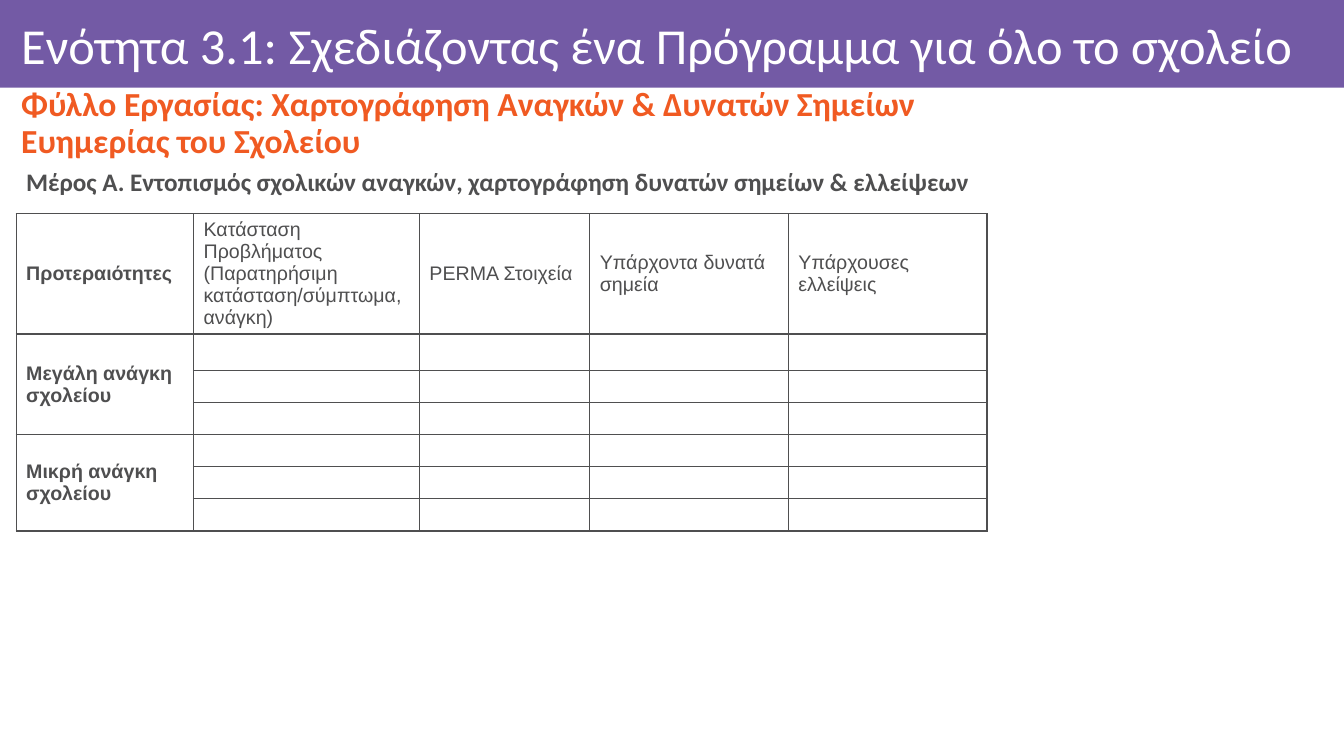
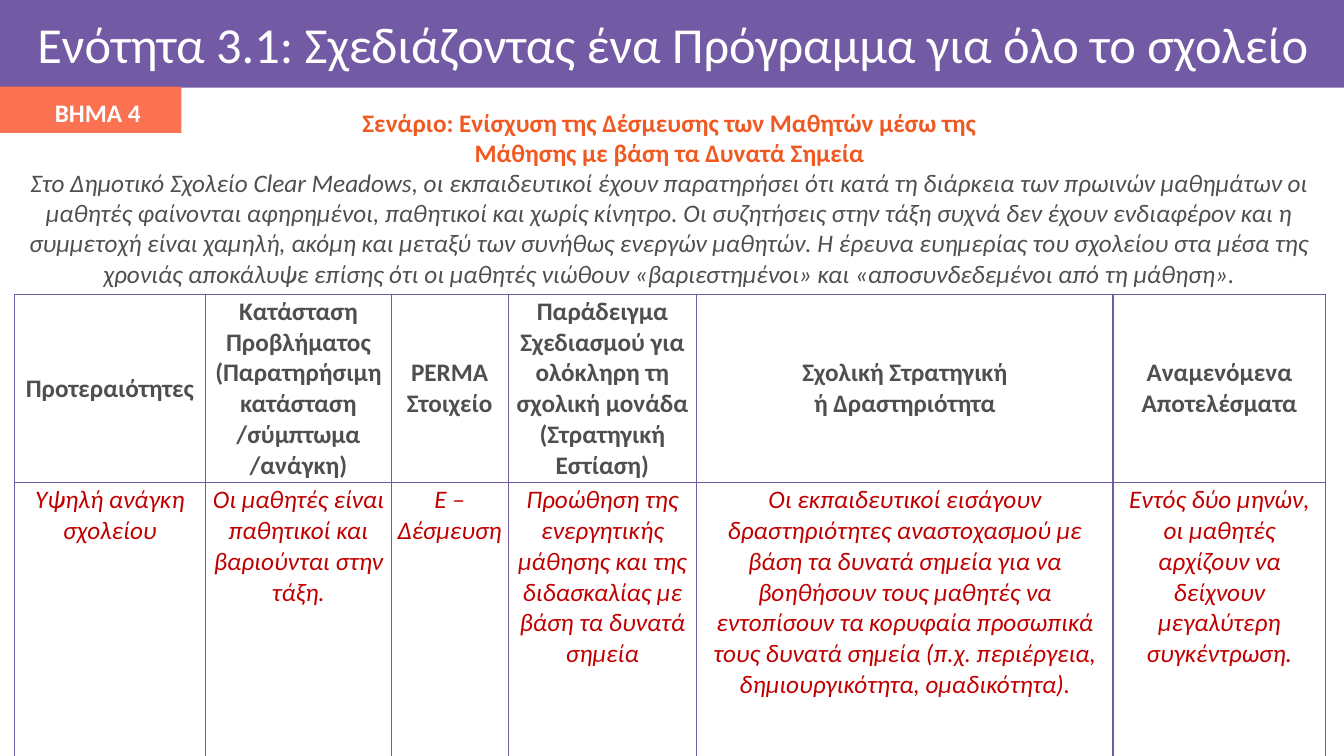
"""Two worksheet slides on designing a whole-school wellbeing programme."""
from lxml.etree import SubElement
from pptx import Presentation
from pptx.dml.color import RGBColor
from pptx.enum.shapes import MSO_SHAPE
from pptx.enum.text import MSO_ANCHOR, MSO_AUTO_SIZE, PP_ALIGN
from pptx.oxml.ns import qn
from pptx.util import Inches, Pt

PURPLE = RGBColor(0x73, 0x5A, 0xA5)
ORANGE = RGBColor(0xF0, 0x5A, 0x22)
CORAL = RGBColor(0xFA, 0x72, 0x52)
GREY = RGBColor(0x4F, 0x4F, 0x50)
RED = RGBColor(0xC0, 0x00, 0x00)
WHITE = RGBColor(0xFF, 0xFF, 0xFF)
WIDTH, HEIGHT, BAND_HEIGHT = 13.33, 7.5, 0.87
TEXT_WIDTH = 13.06

UNIT = "Ενότητα 3.1: Σχεδιάζοντας ένα Πρόγραμμα για όλο το σχολείο"
WORKSHEET = "Φύλλο Εργασίας: Χαρτογράφηση Αναγκών & Δυνατών Σημείων\vΕυημερίας του Σχολείου"
PART = "Μέρος Α. Εντοπισμός σχολικών αναγκών, χαρτογράφηση δυνατών σημείων & ελλείψεων"
NEEDS_HEADER = [
    "Προτεραιότητες",
    "Κατάσταση Προβλήματος (Παρατηρήσιμη κατάσταση/σύμπτωμα, ανάγκη)",
    "PERMA Στοιχεία",
    "Υπάρχοντα δυνατά σημεία",
    "Υπάρχουσες ελλείψεις",
]
PRIORITIES = ["Μεγάλη ανάγκη σχολείου", "Μικρή ανάγκη σχολείου"]
LINES_PER_PRIORITY = 3
NEEDS_COLUMNS = [1.76, 2.24, 1.69, 1.97, 1.97]
NEEDS_ROWS = [1.02, 0.36] + [0.27] * 5

STEP = "ΒΗΜΑ 4"
SCENARIO = "Σενάριο: Ενίσχυση της Δέσμευσης των Μαθητών μέσω της\vΜάθησης με βάση τα Δυνατά Σημεία"
STORY = (
    "Στο Δημοτικό Σχολείο Clear Meadows, οι εκπαιδευτικοί έχουν παρατηρήσει ότι κατά τη "
    "διάρκεια των πρωινών μαθημάτων οι μαθητές φαίνονται αφηρημένοι, παθητικοί και χωρίς "
    "κίνητρο. Οι συζητήσεις στην τάξη συχνά δεν έχουν ενδιαφέρον και η συμμετοχή είναι "
    "χαμηλή, ακόμη και μεταξύ των συνήθως ενεργών μαθητών. Η έρευνα ευημερίας του σχολείου "
    "στα μέσα της χρονιάς αποκάλυψε επίσης ότι οι μαθητές νιώθουν «βαριεστημένοι» και "
    "«αποσυνδεδεμένοι από τη μάθηση»."
)
PLAN = [
    ("Προτεραιότητες", "Υψηλή ανάγκη σχολείου"),
    ("Κατάσταση Προβλήματος (Παρατηρήσιμη κατάσταση /σύμπτωμα\v/ανάγκη)",
     "Οι μαθητές είναι παθητικοί και βαριούνται στην τάξη."),
    ("PERMA Στοιχείο", "E – Δέσμευση"),
    ("Παράδειγμα Σχεδιασμού για ολόκληρη τη σχολική μονάδα (Στρατηγική Εστίαση)",
     "Προώθηση της ενεργητικής μάθησης και της διδασκαλίας με βάση τα δυνατά σημεία"),
    ("Σχολική Στρατηγική\vή Δραστηριότητα",
     "Οι εκπαιδευτικοί εισάγουν δραστηριότητες αναστοχασμού με βάση τα δυνατά σημεία για να "
     "βοηθήσουν τους μαθητές να εντοπίσουν τα κορυφαία προσωπικά τους δυνατά σημεία "
     "(π.χ. περιέργεια, δημιουργικότητα, ομαδικότητα)."),
    ("Αναμενόμενα Αποτελέσματα",
     "Εντός δύο μηνών, οι μαθητές αρχίζουν να δείχνουν μεγαλύτερη συγκέντρωση."),
]
PLAN_COLUMNS = [1.9, 1.84, 1.16, 1.87, 4.13, 2.11]
PLAN_ROWS = [1.72, 2.78]


def write(paragraph, text, size, color, bold=False, italic=False, font="Calibri",
          align=PP_ALIGN.LEFT, spacing=1.0):
    """Fill a paragraph with uniformly formatted text and no bullet."""
    paragraph.text = text
    paragraph.alignment = align
    paragraph.line_spacing = spacing
    paragraph.space_before = Pt(0)
    properties = paragraph._p.get_or_add_pPr()
    properties.set("marL", "0")
    properties.set("indent", "0")
    SubElement(properties, qn("a:buNone"))
    for run in paragraph.runs:
        run.font.name, run.font.size = font, Pt(size)
        run.font.bold, run.font.italic = bold, italic
        run.font.color.rgb = color


def place(shape, left, top, width, height):
    shape.left, shape.top = Inches(left), Inches(top)
    shape.width, shape.height = Inches(width), Inches(height)


def set_frame(frame, anchor, margins=(0.1, 0.05, 0.1, 0.05)):
    frame.word_wrap = True
    frame.auto_size = MSO_AUTO_SIZE.NONE
    frame.vertical_anchor = anchor
    (frame.margin_left, frame.margin_top,
     frame.margin_right, frame.margin_bottom) = map(Inches, margins)


def add_bar(slide, width, top, height, color):
    bar = slide.shapes.add_shape(MSO_SHAPE.RECTANGLE, 0, Inches(top), Inches(width), Inches(height))
    bar.shadow.inherit = False
    bar.fill.solid()
    bar.fill.fore_color.rgb = color
    bar.line.fill.background()
    return bar


def add_unit_slide(deck, title_left, title_top):
    slide = deck.slides.add_slide(deck.slide_layouts[1])
    title = slide.shapes.title
    place(title, title_left, title_top, TEXT_WIDTH, 0.78)
    set_frame(title.text_frame, MSO_ANCHOR.MIDDLE, (0.1, 0.06, 0.06, 0.06))
    write(title.text_frame.paragraphs[0], UNIT, 36, WHITE, spacing=0.9)
    return slide, slide.placeholders[1]


def add_grid(slide, left, top, columns, rows, border):
    """Add an unfilled table with a one-point border round every cell."""
    table = slide.shapes.add_table(
        len(rows), len(columns), Inches(left), Inches(top),
        Inches(sum(columns)), Inches(sum(rows))).table
    table.first_row = table.horz_banding = False
    for column, width in zip(table.columns, columns):
        column.width = Inches(width)
    for row, height in zip(table.rows, rows):
        row.height = Inches(height)
    for cell in table.iter_cells():
        properties = cell._tc.get_or_add_tcPr()
        for side in ("a:lnL", "a:lnR", "a:lnT", "a:lnB"):
            line = SubElement(properties, qn(side), w=str(Pt(1)))
            SubElement(SubElement(line, qn("a:solidFill")), qn("a:srgbClr"), val=str(border))
        cell.fill.background()
        cell.vertical_anchor = MSO_ANCHOR.MIDDLE
    return table


def build_needs_slide(deck):
    slide, heading = add_unit_slide(deck, 0.11, 0.09)
    place(heading, 0.11, 0.93, TEXT_WIDTH, 0.6)
    set_frame(heading.text_frame, MSO_ANCHOR.MIDDLE)
    write(heading.text_frame.paragraphs[0], WORKSHEET, 24, ORANGE, bold=True, spacing=0.9)

    part = slide.shapes.add_textbox(Inches(0.16), Inches(1.6), Inches(9.84), Inches(0.4))
    set_frame(part.text_frame, MSO_ANCHOR.TOP)
    write(part.text_frame.paragraphs[0], PART, 18, GREY, bold=True)

    needs = add_grid(slide, 0.16, 2.12, NEEDS_COLUMNS, NEEDS_ROWS, GREY)
    labels = {(0, column): label for column, label in enumerate(NEEDS_HEADER)}
    for index, priority in enumerate(PRIORITIES):
        first = 1 + index * LINES_PER_PRIORITY
        labels[first, 0] = priority
        needs.cell(first, 0).merge(needs.cell(first + LINES_PER_PRIORITY - 1, 0))
    for row in range(len(NEEDS_ROWS)):
        for column in range(len(NEEDS_COLUMNS)):
            paragraph = needs.cell(row, column).text_frame.paragraphs[0]
            if (row, column) in labels:
                write(paragraph, labels[row, column], 14, GREY, bold=column == 0, font="Arial")
            else:
                blank = SubElement(paragraph._p, qn("a:endParaRPr"), sz="1400")
                SubElement(blank, qn("a:latin"), typeface="Arial")


def build_scenario_slide(deck):
    slide, scenario = add_unit_slide(deck, 0.27, 0.08)
    place(scenario, 0.11, 1.01, TEXT_WIDTH, 1.92)
    frame = scenario.text_frame
    set_frame(frame, MSO_ANCHOR.TOP)
    write(frame.paragraphs[0], SCENARIO, 18, ORANGE, bold=True, align=PP_ALIGN.CENTER)
    write(frame.add_paragraph(), STORY, 18, GREY, italic=True, align=PP_ALIGN.CENTER)

    step = add_bar(slide, 1.8, 0.86, 0.46, CORAL)
    set_frame(step.text_frame, MSO_ANCHOR.MIDDLE, (0.14, 0.05, 0, 0))
    write(step.text_frame.paragraphs[0], STEP, 18, WHITE, bold=True, align=PP_ALIGN.CENTER)

    plan = add_grid(slide, 0.14, 2.92, PLAN_COLUMNS, PLAN_ROWS, PURPLE)
    for column, texts in enumerate(PLAN):
        for row, text in enumerate(texts):
            cell = plan.cell(row, column)
            cell.margin_left = cell.margin_right = Inches(0.05)
            cell.margin_top = cell.margin_bottom = Inches(0.02)
            header = row == 0
            cell.vertical_anchor = MSO_ANCHOR.MIDDLE if header else MSO_ANCHOR.TOP
            write(cell.text_frame.paragraphs[0], text, 18, GREY if header else RED,
                  bold=header, italic=not header, align=PP_ALIGN.CENTER)


def main():
    deck = Presentation()
    deck.slide_width, deck.slide_height = Inches(WIDTH), Inches(HEIGHT)
    build_needs_slide(deck)
    build_scenario_slide(deck)
    band = add_bar(deck.slides[0], WIDTH, 0, BAND_HEIGHT, PURPLE)
    deck.slide_master.shapes._spTree.insert(2, band._element)
    deck.save("out.pptx")


if __name__ == "__main__":
    main()
